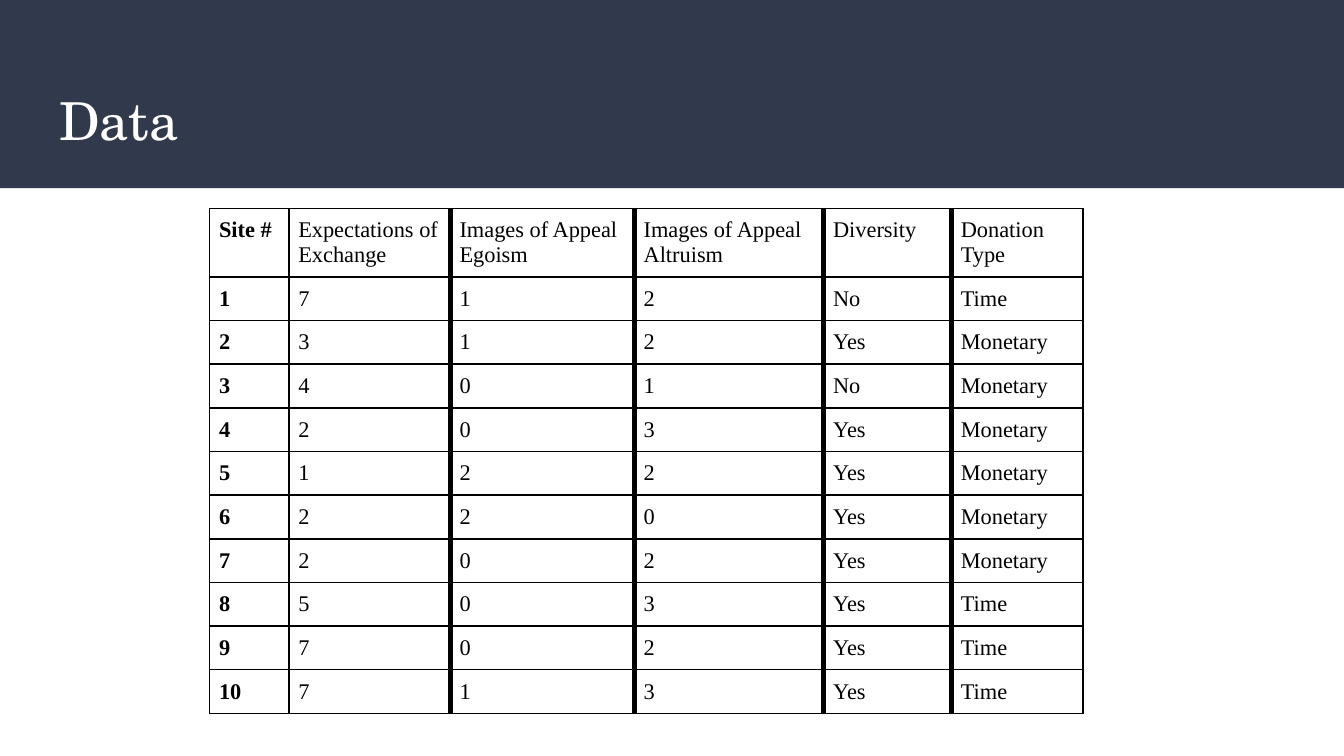
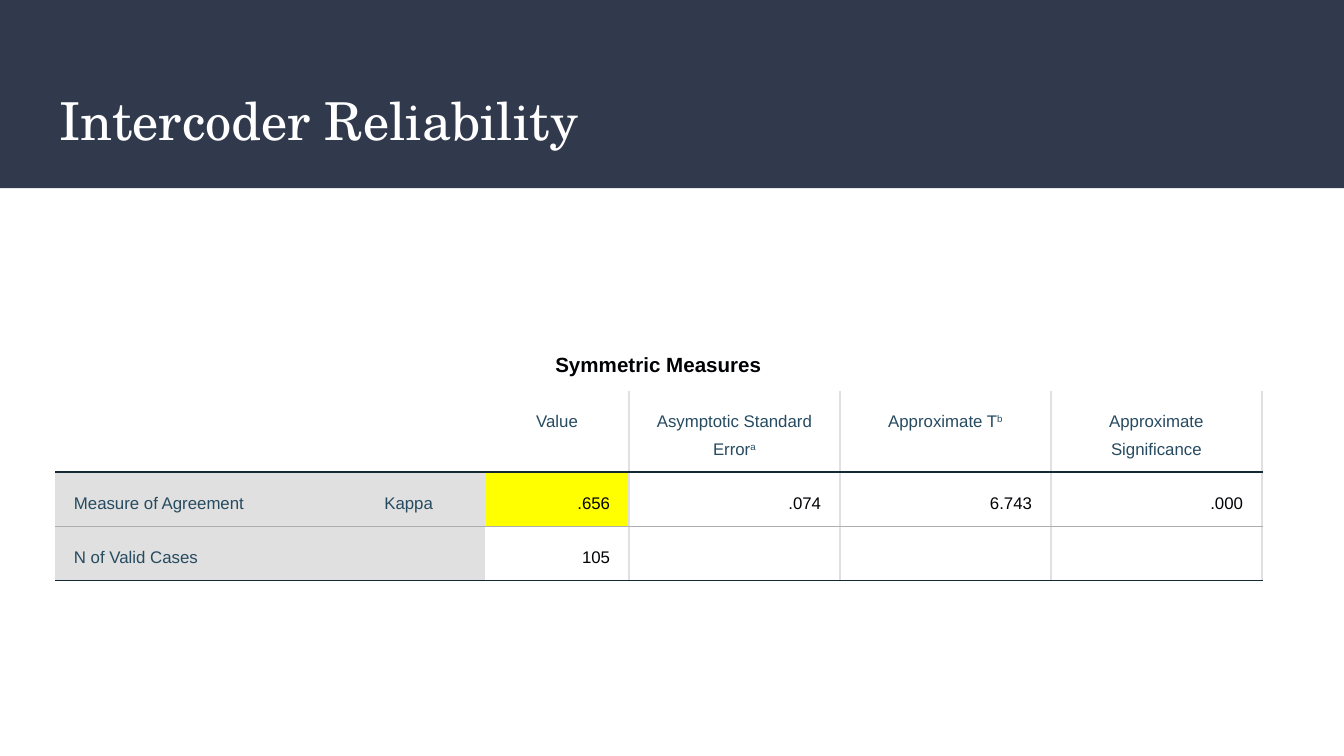
from pptx import Presentation
from pptx.dml.color import RGBColor
from pptx.enum.shapes import MSO_SHAPE
from pptx.enum.text import MSO_ANCHOR, PP_ALIGN
from pptx.oxml.ns import qn
from pptx.util import Inches, Pt
from lxml.etree import SubElement

NAVY = RGBColor(0x31, 0x39, 0x4D)
WHITE = RGBColor(0xFF, 0xFF, 0xFF)
BLACK = RGBColor(0x00, 0x00, 0x00)
INK = RGBColor(0x01, 0x02, 0x05)
TEAL = RGBColor(0x26, 0x4A, 0x60)
DARK = RGBColor(0x15, 0x29, 0x35)
PALE = RGBColor(0xE0, 0xE0, 0xE0)
GREY = RGBColor(0xAE, 0xAE, 0xAE)
YELLOW = RGBColor(0xFF, 0xFF, 0x00)

SERIF = "Times New Roman"
SANS = "Arial"
DISPLAY = "TeX Gyre Schola"

SITES = [
    ("Site #", "Expectations of Exchange", "Images of Appeal Egoism",
     "Images of Appeal Altruism", "Diversity", "Donation\nType"),
    ("1", "7", "1", "2", "No", "Time"),
    ("2", "3", "1", "2", "Yes", "Monetary"),
    ("3", "4", "0", "1", "No", "Monetary"),
    ("4", "2", "0", "3", "Yes", "Monetary"),
    ("5", "1", "2", "2", "Yes", "Monetary"),
    ("6", "2", "2", "0", "Yes", "Monetary"),
    ("7", "2", "0", "2", "Yes", "Monetary"),
    ("8", "5", "0", "3", "Yes", "Time"),
    ("9", "7", "0", "2", "Yes", "Time"),
    ("10", "7", "1", "3", "Yes", "Time"),
]
KAPPA = [
    ("Symmetric Measures", "", "", "", "", ""),
    ("", "", "Value", "Asymptotic Standard Error^a", "Approximate T^b",
     "Approximate Significance"),
    ("Measure of Agreement", "Kappa", ".656", ".074", "6.743", ".000"),
    ("N of Valid Cases", "", "105", "", "", ""),
]


def write(frame, text, font, size, color, bold=False, align=PP_ALIGN.LEFT):
    """Fill a text frame; a line break starts a paragraph, ^ a superscript."""
    for i, line in enumerate(text.split("\n")):
        para = frame.add_paragraph() if i else frame.paragraphs[0]
        para.alignment = align
        for j, part in enumerate(line.split("^")):
            if not part:
                SubElement(para._p, qn("a:endParaRPr"), sz=str(size * 100))
                continue
            run = para.add_run()
            run.text = part
            run.font.name = font
            run.font.size = Pt(size)
            run.font.bold = bold
            run.font.color.rgb = color
            if j:
                run.font._element.set("baseline", "30000")


def edge(cell, **sides):
    """Draw the given sides (color, points) and clear the others."""
    props = cell._tc.get_or_add_tcPr()
    for side in "LRTB":
        color, width = sides.get(side) or (None, 0)
        line = SubElement(props, qn("a:ln" + side), w=str(Pt(width)))
        if color is None:
            SubElement(line, qn("a:noFill"))
        else:
            fill = SubElement(line, qn("a:solidFill"))
            SubElement(fill, qn("a:srgbClr"), val=str(color))


def pad(cell, inset):
    """Give a cell equal margins."""
    cell.margin_left = cell.margin_right = Inches(inset)
    cell.margin_top = cell.margin_bottom = Inches(inset)


def indent(frame):
    """Set the loose, slightly inset paragraphs of the statistics table."""
    for para in frame.paragraphs:
        para.line_spacing = 1.45
        props = para._p.get_or_add_pPr()
        for name in ("marL", "marR"):
            props.set(name, str(Inches(0.04)))


def add_grid(slide, left, top, cols, rows):
    """Add a plain table with the given column widths and row heights."""
    grid = slide.shapes.add_table(
        len(rows), len(cols), Inches(left), Inches(top),
        Inches(sum(cols)), Inches(sum(rows))).table
    grid.first_row = grid.horz_banding = False
    for col, width in zip(grid.columns, cols):
        col.width = Inches(width)
    for row, height in zip(grid.rows, rows):
        row.height = Inches(height)
    return grid


def add_band(slide):
    """Put the title band on the layout that the slides share."""
    band = slide.shapes.add_shape(
        MSO_SHAPE.RECTANGLE, 0, 0, Inches(10), Inches(1.4))
    band.shadow.inherit = False
    band.fill.solid()
    band.fill.fore_color.rgb = NAVY
    band.line.fill.background()
    slide.slide_layout.placeholders[0].element.addprevious(band.element)


def add_page(deck, text):
    """Add a slide with its title."""
    slide = deck.slides.add_slide(deck.slide_layouts[5])
    title = slide.shapes.title
    title.left, title.top = Inches(0.34), Inches(0.55)
    title.width, title.height = Inches(9.32), Inches(0.68)
    frame = title.text_frame
    frame.margin_left = frame.margin_right = Inches(0.1)
    frame.margin_top = frame.margin_bottom = Inches(0.1)
    frame.vertical_anchor = MSO_ANCHOR.MIDDLE
    write(frame, text, DISPLAY, 28, WHITE)
    return slide


def add_sites(slide):
    """Add the table of coded sites."""
    cols = [0.59, 1.2, 1.37, 1.41, 0.95, 0.98]
    grid = add_grid(slide, 1.56, 1.55, cols, [0.5] + [0.32] * 10)
    thin, thick = (BLACK, 1), (BLACK, 3)
    for r, row in enumerate(SITES):
        for c, text in enumerate(row):
            cell = grid.cell(r, c)
            pad(cell, 0.07)
            edge(cell, L=thick if c > 1 else thin,
                 R=thick if 0 < c < 5 else thin, T=thin, B=thin)
            cell.fill.background()
            write(cell.text_frame, text, SERIF, 12, BLACK, c == 0)


def add_kappa(slide):
    """Add the table of agreement statistics."""
    cols = [2.31, 0.89, 1.07, 1.57, 1.57, 1.57]
    grid = add_grid(slide, 0.41, 2.46, cols, [0.44, 0.6, 0.4, 0.4])
    rules = [None, None, (DARK, 1), (GREY, 1), (DARK, 1)]
    for r, row in enumerate(KAPPA):
        for c, text in enumerate(row):
            cell = grid.cell(r, c)
            pad(cell, 0.1)
            edge(cell, L=(PALE, 1) if r and c > 2 else None,
                 R=(PALE, 1) if r and c > 1 else None,
                 T=rules[r], B=rules[r + 1])
            value = r > 1 and c > 1
            cell.fill.solid()
            cell.fill.fore_color.rgb = PALE if r > 1 and c < 2 else WHITE
            align = PP_ALIGN.RIGHT if value else PP_ALIGN.LEFT
            write(cell.text_frame, text, SANS, 9 if r else 11,
                  INK if value or r == 0 else TEAL, r == 0,
                  align if r > 1 else PP_ALIGN.CENTER)
            indent(cell.text_frame)
    grid.cell(2, 2).fill.fore_color.rgb = YELLOW
    for r, last in ((0, 5), (1, 1), (3, 1)):
        grid.cell(r, 0).merge(grid.cell(r, last))


def main():
    """Build and save the deck."""
    deck = Presentation()
    deck.slide_width = Inches(10)
    deck.slide_height = deck.slide_width * 9 // 16
    data = add_page(deck, "Data")
    add_band(data)
    add_sites(data)
    add_kappa(add_page(deck, "Intercoder Reliability"))
    deck.save("out.pptx")


if __name__ == "__main__":
    main()
